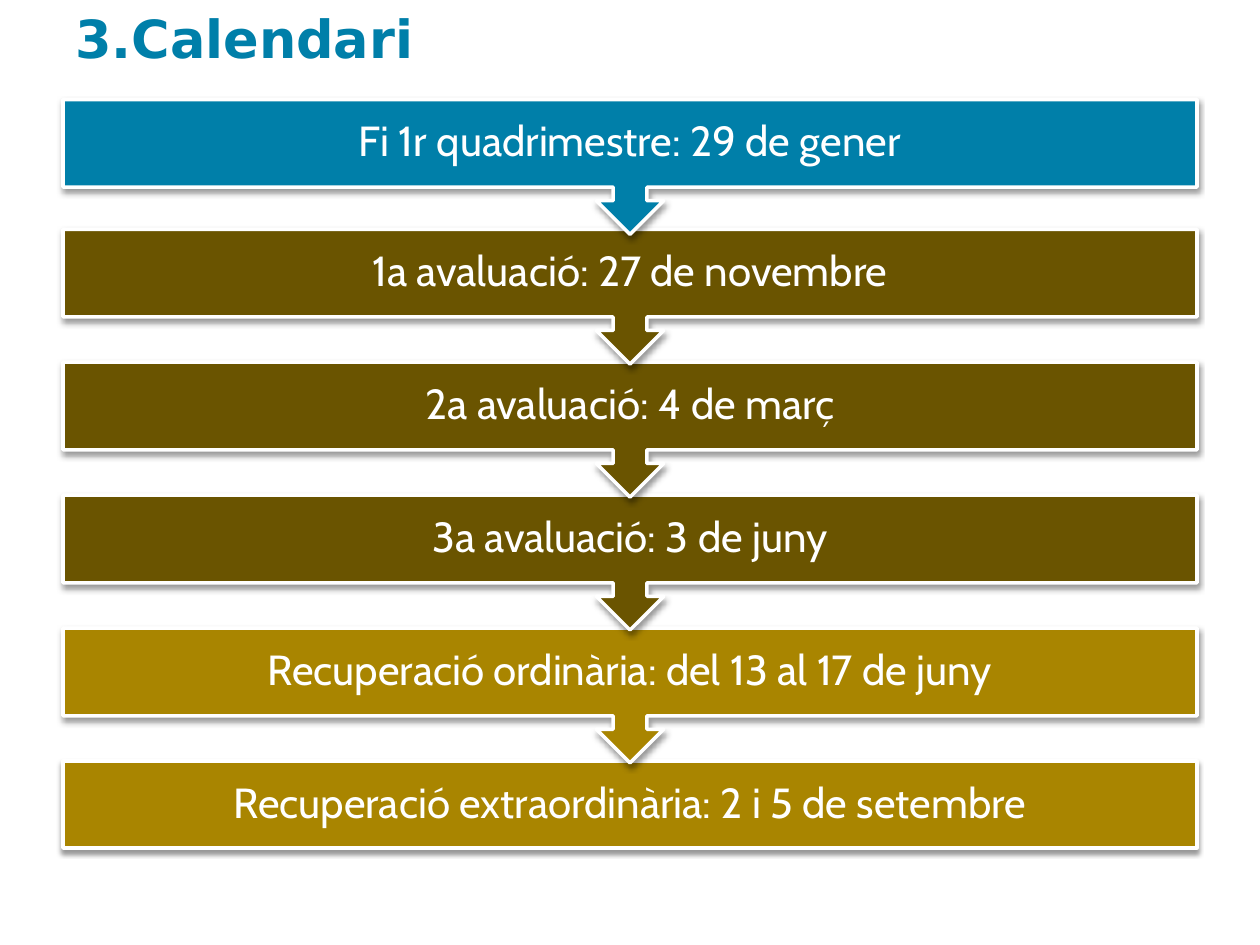
from lxml.etree import SubElement
from pptx import Presentation
from pptx.dml.color import RGBColor
from pptx.enum.shapes import MSO_SHAPE
from pptx.enum.text import MSO_ANCHOR, PP_ALIGN
from pptx.oxml.ns import qn
from pptx.util import Inches, Pt

BLUE, BROWN, GOLD, WHITE = "007FA9", "6A5400", "A98500", "FFFFFF"
LEFT, WIDTH = 0.5, 9
BOX_HEIGHT, CALLOUT_HEIGHT = 0.69, 1.07
FIRST_TOP, SECOND_TOP, STEP = 0.79, 1.82, 1.055

STAGES = [
    ("Fi 1r quadrimestre: 29 de gener", BLUE),
    ("1a avaluació: 27 de novembre", BROWN),
    ("2a avaluació: 4 de març", BROWN),
    ("3a avaluació: 3 de juny", BROWN),
    ("Recuperació ordinària: del 13 al 17 de juny", GOLD),
    ("Recuperació extraordinària: 2 i 5 de setembre", GOLD),
]


def color(code):
    return RGBColor.from_string(code)


def add_shadow(shape):
    """Soft shadow straight below the shape, even when it is rotated."""
    shape.shadow.inherit = False
    effects = shape._element.spPr.find(qn("a:effectLst"))
    shadow = SubElement(effects, qn("a:outerShdw"), blurRad=str(Pt(3)),
                        dist=str(Pt(2)), dir="5400000", rotWithShape="0")
    tint = SubElement(shadow, qn("a:srgbClr"), val="000000")
    SubElement(tint, qn("a:alpha"), val="40000")


def add_panel(page, kind, top, height, fill, rotation=0):
    panel = page.shapes.add_shape(kind, Inches(LEFT), Inches(top),
                                  Inches(WIDTH), Inches(height))
    panel.rotation = rotation
    panel.fill.solid()
    panel.fill.fore_color.rgb = color(fill)
    panel.line.color.rgb = color(WHITE)
    panel.line.width = Pt(2)
    add_shadow(panel)


def add_text(page, text, top, height, *, font, size, fill, bold=False,
             align=PP_ALIGN.LEFT, anchor=MSO_ANCHOR.MIDDLE, inset=None, spacing=1.0):
    box = page.shapes.add_textbox(Inches(LEFT), Inches(top),
                                  Inches(WIDTH), Inches(height))
    frame = box.text_frame
    frame.word_wrap = True
    frame.vertical_anchor = anchor
    if inset is not None:
        frame.margin_left = frame.margin_right = Inches(inset)
        frame.margin_top = frame.margin_bottom = Inches(inset)
    para = frame.paragraphs[0]
    para.alignment = align
    para.line_spacing = spacing
    span = para.add_run()
    span.text = text
    span.font.name = font
    span.font.size = Pt(size)
    span.font.bold = bold
    span.font.color.rgb = color(fill)


def add_stage(page, index):
    text, fill = STAGES[index]
    top = SECOND_TOP + (index - 1) * STEP if index else FIRST_TOP
    if index == len(STAGES) - 1:
        add_panel(page, MSO_SHAPE.RECTANGLE, top, BOX_HEIGHT, fill)
    else:
        add_panel(page, MSO_SHAPE.UP_ARROW_CALLOUT, top, CALLOUT_HEIGHT, fill, 180)
    add_text(page, text, top, BOX_HEIGHT, font="Cabin", size=24, fill=WHITE,
             align=PP_ALIGN.CENTER, inset=0.19, spacing=0.9)


def main():
    deck = Presentation()
    deck.slide_width, deck.slide_height = Inches(10), Inches(7.5)
    page = deck.slides.add_slide(deck.slide_layouts[6])

    # Stages, last one first so that each arrow overlaps the box below
    for index in reversed(range(len(STAGES))):
        add_stage(page, index)

    # Title
    add_text(page, "3.Calendari", 0.09, 0.51, font="DejaVu Sans", size=30,
             fill=BLUE, bold=True, anchor=MSO_ANCHOR.BOTTOM)

    deck.save("out.pptx")


if __name__ == "__main__":
    main()
